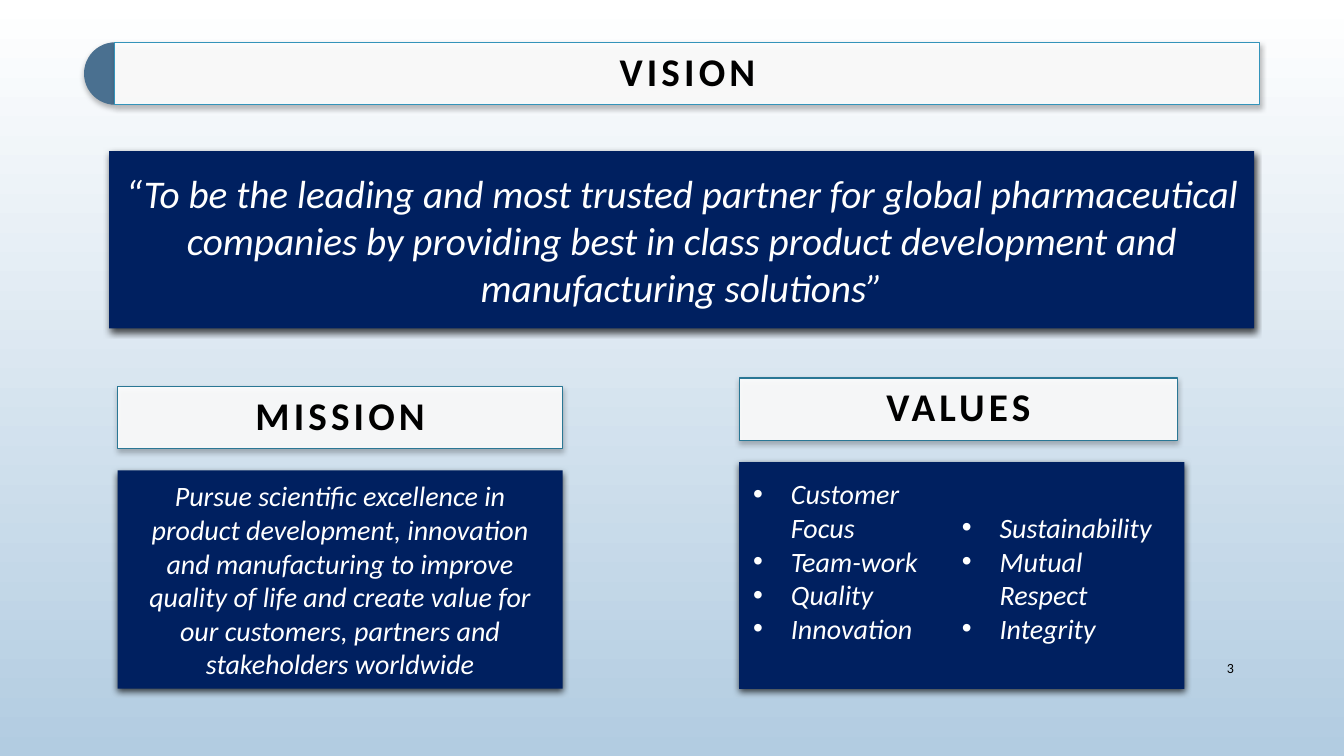
"""Build the vision, mission and values slide."""
from lxml import etree
from pptx import Presentation, util as u
from pptx.dml.color import RGBColor
from pptx.enum import shapes, text
from pptx.oxml import ns

HEADERS = [
    ("VISION", (82.08, 30.2, 817.92, 44.64), "3494BA"),
    ("MISSION", (84, 276, 318, 44.64), "2A7795"),
    ("VALUES", (528, 270, 313.2, 44.64), "2A7795"),
]
STATEMENTS = [
    ("“To be the leading and most trusted partner for global pharmaceutical companies "
     "by providing best in class product development and manufacturing solutions”",
     (78, 108, 817.92, 126.5), "title"),
    ("Pursue scientific excellence in product development, innovation and manufacturing "
     "to improve quality of life and create value for our customers, partners and "
     "stakeholders worldwide", (84, 336, 318, 156), "body"),
]
VALUES = [["Customer Focus", "Team-work", "Quality", "Innovation"],
          ["Sustainability", "Mutual Respect", "Integrity"]]
VALUES_PANEL = (528, 330, 318, 162)
VALUES_TOPS = [340.7, 364.7]
CAP = (60, 30.2, 44.64, 44.64)
PAGE_NUMBER = ("3", (828, 463, 60.5, 28.8))

THEME = {
    "font": "Calibri", "title": 28, "body": 20, "number": 10,
    "navy": "002060", "steel": "4A7090", "white": "FFFFFF", "black": "000000",
    "sky": "B2CCE1", "inset": 10, "indent": 27,
    "soft": (28, 4, 2), "strong": (69, 5, 2),
}


def color(name):
    return RGBColor.from_string(THEME.get(name, name))


def add_node(parent, tag, **attributes):
    node = etree.SubElement(parent, ns.qn(tag))
    for key, value in attributes.items():
        node.set(key, str(value))
    return node


def add_shadow(shape, opacity, blur, distance):
    shape.shadow.inherit = False
    effects = shape.element.spPr.find(ns.qn("a:effectLst"))
    shadow = add_node(effects, "a:outerShdw", blurRad=int(u.Pt(blur)),
                      dist=int(u.Pt(distance)), dir=5400000, rotWithShape=0)
    shade = add_node(shadow, "a:srgbClr", val=THEME["black"])
    add_node(shade, "a:alpha", val=opacity * 1000)


def add_block(page, area, fill, shadow, kind=shapes.MSO_SHAPE.RECTANGLE, line=None, opacity=100):
    block = page.shapes.add_shape(kind, *map(u.Pt, area))
    block.fill.solid()
    block.fill.fore_color.rgb = color(fill)
    if opacity < 100:
        shade = block.element.spPr.find(ns.qn("a:solidFill"))[0]
        add_node(shade, "a:alpha", val=opacity * 1000)
    if line:
        block.line.color.rgb = color(line)
        block.line.width = u.Pt(0.75)
    else:
        block.line.fill.background()
    add_shadow(block, *THEME[shadow])
    return block


def write(box, lines, size="body", ink="white", bold=False, italic=False, align="CENTER",
          anchor="MIDDLE", inset=(10, 0), leading=None, tracking=0, bullet=None):
    frame = box.text_frame
    frame.word_wrap = True
    frame.vertical_anchor = getattr(text.MSO_ANCHOR, anchor)
    frame.margin_left = frame.margin_right = u.Pt(inset[0])
    frame.margin_top = frame.margin_bottom = u.Pt(inset[1])
    for index, line in enumerate(lines):
        para = frame.add_paragraph() if index else frame.paragraphs[0]
        para.alignment = getattr(text.PP_ALIGN, align)
        if leading:
            para.line_spacing = leading
        if bullet:
            properties = para._p.get_or_add_pPr()
            properties.set("marL", str(u.Pt(THEME["indent"])))
            properties.set("indent", str(-u.Pt(THEME["indent"])))
            add_node(properties, "a:buFont", typeface="Arial")
            add_node(properties, "a:buChar", char=bullet)
        span = para.add_run()
        span.text = line
        span.font.name = THEME["font"]
        span.font.size = u.Pt(THEME[size])
        span.font.bold, span.font.italic = bold, italic
        span.font.color.rgb = color(ink)
        if tracking:
            span._r.get_or_add_rPr().set("spc", str(tracking * 100))


def paint_background(page):
    fill = page.background.fill
    fill.gradient()
    fill.gradient_angle = 270
    for stop, position, name in zip(fill.gradient_stops, (0, 1), ("white", "sky")):
        stop.position = position
        stop.color.rgb = color(name)


def add_values(page):
    add_block(page, VALUES_PANEL, "navy", "strong")
    left, _, width, _ = VALUES_PANEL
    column = (width - 2 * THEME["inset"]) / len(VALUES)
    for index, (names, top) in enumerate(zip(VALUES, VALUES_TOPS)):
        area = (left + THEME["inset"] + index * column, top, column, 122)
        box = page.shapes.add_textbox(*map(u.Pt, area))
        write(box, names, italic=True, align="JUSTIFY", anchor="TOP", inset=(0, 0), bullet="•")


def main():
    deck = Presentation()
    deck.slide_width, deck.slide_height = u.Pt(960), u.Pt(540)
    page = deck.slides.add_slide(deck.slide_layouts[6])
    paint_background(page)
    cap = add_block(page, CAP, "steel", "soft", kind=shapes.MSO_SHAPE.PIE)
    cap.adjustments[0], cap.adjustments[1] = 54, 162
    for title, area, line in HEADERS:
        block = add_block(page, area, "white", "soft", line=line, opacity=90)
        write(block, [title], size="title", ink="black", bold=True,
              inset=(8.64, 8.64), leading=0.9, tracking=3)
    for statement, area, size in STATEMENTS:
        write(add_block(page, area, "navy", "strong"), [statement], size=size, italic=True)
    add_values(page)
    number, area = PAGE_NUMBER
    box = page.shapes.add_textbox(*map(u.Pt, area))
    write(box, [number], size="number", ink="black", align="RIGHT", inset=(7.2, 3.6))
    deck.save("out.pptx")


if __name__ == "__main__":
    main()
